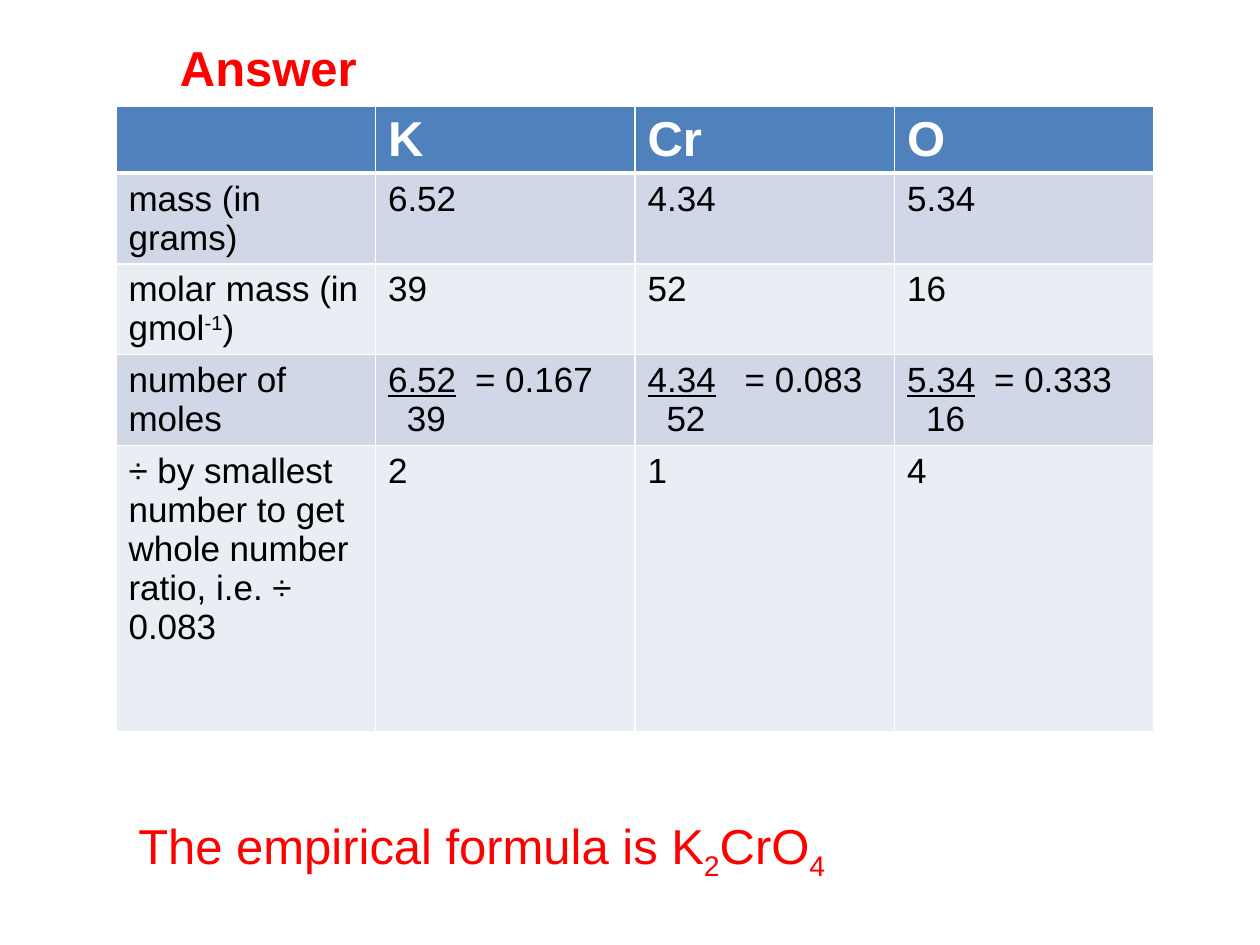
"""Build a slide that works out an empirical formula in a table."""
from lxml import etree
from pptx import Presentation
from pptx.dml.color import RGBColor
from pptx.enum import text as t
from pptx.oxml import ns
from pptx.util import Inches, Pt

RED = RGBColor(0xFF, 0x00, 0x00)
WHITE = RGBColor(0xFF, 0xFF, 0xFF)
BLACK = RGBColor(0x00, 0x00, 0x00)
HEADER_FILL = RGBColor(0x4F, 0x81, 0xBD)
BAND_FILLS = [RGBColor(0xD0, 0xD8, 0xE8), RGBColor(0xE9, 0xED, 0xF4)]

HEADINGS = ["", "K", "Cr", "O"]
STEPS = [
    ([("mass (in grams)", 0)], ["6.52", "4.34", "5.34"]),
    ([("molar mass (in gmol", 0), ("-1", 30), (")", 0)], ["39", "52", "16"]),
    ([("number of moles", 0)], [
        ("6.52", "39", "= 0.167", 0.69),
        ("4.34", "52", "= 0.083", 0.77),
        ("5.34", "16", "= 0.333", 0.69),
    ]),
    ([("÷ by smallest number to get whole number ratio, i.e. ÷ 0.083", 0)], ["2", "1", "4"]),
]
FORMULA = [("The empirical formula is K", 0), ("2", -25), ("CrO", 0), ("4", -25)]

TABLE_LEFT, TABLE_TOP, COLUMN_WIDTH = 0.92, 0.84, 2.06
ROW_HEIGHTS = [0.53, 0.72, 0.72, 0.72, 2.27]
DENOMINATOR_INDENT = 0.15


def add_span(para, words, size, color, bold=False, underline=False, baseline=0):
    span = para.add_run()
    span.text = words
    font = span.font
    font.name, font.size, font.bold, font.underline = "Arial", Pt(size), bold, underline
    font.color.rgb = color
    if baseline:
        span._r.get_or_add_rPr().set("baseline", str(baseline * 1000))


def add_spans(para, parts, size, color):
    for words, baseline in parts:
        add_span(para, words, size, color, baseline=baseline)


def add_fraction(frame, numerator, denominator, result, tab):
    top = frame.paragraphs[0]
    tabs = etree.SubElement(top._p.get_or_add_pPr(), ns.qn("a:tabLst"))
    etree.SubElement(tabs, ns.qn("a:tab"), pos=str(Inches(tab)), algn="l")
    add_span(top, numerator, 20, BLACK, underline=True)
    add_span(top, "\t" + result, 20, BLACK)
    bottom = frame.add_paragraph()
    bottom._p.get_or_add_pPr().set("marL", str(Inches(DENOMINATOR_INDENT)))
    add_span(bottom, denominator, 20, BLACK)


def style_cell(cell, fill, bottom_width=1):
    properties = cell._tc.get_or_add_tcPr()
    for side, width in (("L", 1), ("R", 1), ("T", 1), ("B", bottom_width)):
        line = etree.SubElement(properties, ns.qn("a:ln" + side), w=str(Pt(width)))
        solid = etree.SubElement(line, ns.qn("a:solidFill"))
        etree.SubElement(solid, ns.qn("a:srgbClr"), val=str(WHITE))
    cell.fill.solid()
    cell.fill.fore_color.rgb = fill


def add_table(page):
    count = len(HEADINGS)
    table = page.shapes.add_table(
        len(ROW_HEIGHTS), count, Inches(TABLE_LEFT), Inches(TABLE_TOP),
        Inches(COLUMN_WIDTH * count), Inches(sum(ROW_HEIGHTS))).table
    for column in table.columns:
        column.width = Inches(COLUMN_WIDTH)
    for row, height in zip(table.rows, ROW_HEIGHTS):
        row.height = Inches(height)
    for column, heading in enumerate(HEADINGS):
        cell = table.cell(0, column)
        style_cell(cell, HEADER_FILL, bottom_width=3)
        if heading:
            add_span(cell.text_frame.paragraphs[0], heading, 28, WHITE, bold=True)
    for row, (label, values) in enumerate(STEPS, start=1):
        for column, value in enumerate([label, *values]):
            cell = table.cell(row, column)
            style_cell(cell, BAND_FILLS[(row - 1) % 2])
            if isinstance(value, tuple):
                add_fraction(cell.text_frame, *value)
            else:
                parts = value if column == 0 else [(value, 0)]
                add_spans(cell.text_frame.paragraphs[0], parts, 20, BLACK)


def add_box(page, left, top, width, height, wrap):
    box = page.shapes.add_textbox(Inches(left), Inches(top), Inches(width), Inches(height))
    box.text_frame.word_wrap = wrap
    box.text_frame.auto_size = t.MSO_AUTO_SIZE.SHAPE_TO_FIT_TEXT
    return box.text_frame.paragraphs[0]


def main():
    deck = Presentation()
    deck.slide_width, deck.slide_height = Inches(10), Inches(7.5)
    page = deck.slides.add_slide(deck.slide_layouts[6])
    add_table(page)
    add_span(add_box(page, 1.33, 0.25, 1.87, 0.57, True), "Answer", 28, RED, bold=True)
    add_spans(add_box(page, 1, 6.42, 5.76, 0.57, False), FORMULA, 28, RED)
    deck.save("out.pptx")


if __name__ == "__main__":
    main()
